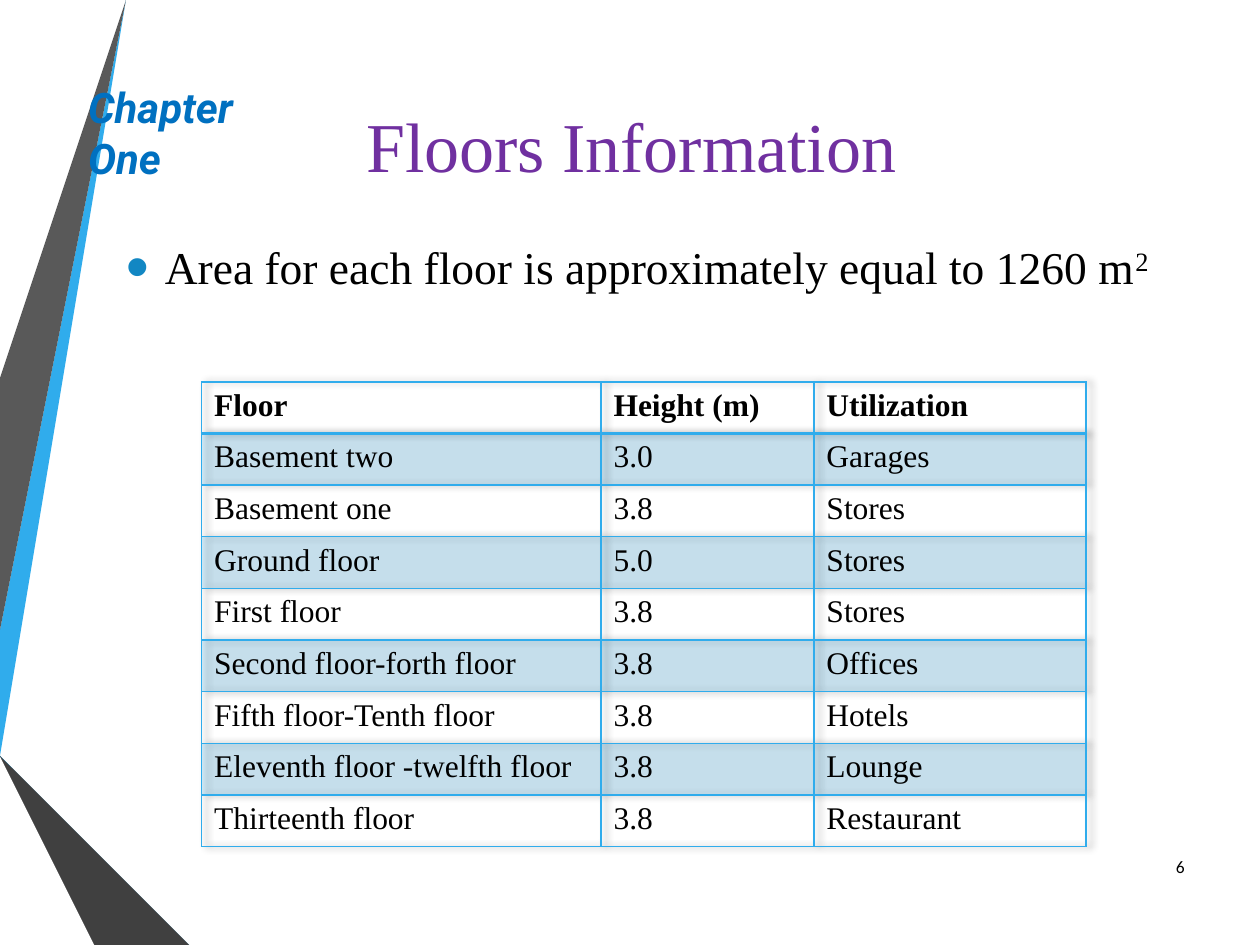
import pptx
import pptx.util
import pptx.oxml
import pptx.oxml.ns
import pptx.dml.color
import pptx.enum.text
from lxml import etree

Inches = pptx.util.Inches
Pt = pptx.util.Pt
RGBColor = pptx.dml.color.RGBColor
Align = pptx.enum.text.PP_ALIGN
Anchor = pptx.enum.text.MSO_ANCHOR
qn = pptx.oxml.ns.qn

SKY = RGBColor(0x30, 0xAC, 0xEC)
BLUE = RGBColor(0x12, 0x87, 0xC3)
DEEP_BLUE = RGBColor(0x0C, 0x5A, 0x82)
GRAY = RGBColor(0x59, 0x59, 0x59)
DARK_GRAY = RGBColor(0x40, 0x40, 0x40)
CHARCOAL = RGBColor(0x26, 0x26, 0x26)
PURPLE = RGBColor(0x70, 0x30, 0xA0)
CHAPTER_BLUE = RGBColor(0x00, 0x70, 0xC0)
BLACK = RGBColor(0, 0, 0)
SERIF = "Times New Roman"

RIBBONS = [
    (SKY, [(0, 5.44), (0, 5.75), (0.22, 5.79), (1.17, 0), (0.89, 0)]),
    (GRAY, [(0.83, 0), (0.55, 0), (0, 3.36), (0, 5.06)]),
    (CHARCOAL, [(0, 6.19), (0, 6.21), (0.93, 7.5), (0.99, 7.5)]),
    (DEEP_BLUE, [(0, 5.79), (0, 5.8), (1.56, 7.5), (1.63, 7.5)]),
    (BLUE, [(0, 5.79), (1.63, 7.5), (2.33, 7.5), (0.22, 5.79), (0, 5.75)]),
    (DARK_GRAY, [(0, 6.19), (0.99, 7.5), (1.51, 7.5), (0, 5.86)]),
]
FLOORS = [
    ("Floor", "Height (m)", "Utilization"),
    ("Basement two", "3.0", "Garages"),
    ("Basement one", "3.8", "Stores"),
    ("Ground floor", "5.0", "Stores"),
    ("First floor", "3.8", "Stores"),
    ("Second floor-forth floor", "3.8", "Offices"),
    ("Fifth floor-Tenth floor", "3.8", "Hotels"),
    ("Eleventh floor -twelfth floor", "3.8", "Lounge"),
    ("Thirteenth floor", "3.8", "Restaurant"),
]
COLUMN_WIDTHS = [3.17, 1.69, 2.16]
ROW_HEIGHT = 0.41


def style_run(run, size, color, font=SERIF, bold=False, italic=False):
    run.font.name = font
    run.font.size = Pt(size)
    run.font.color.rgb = color
    run.font.bold = bold
    run.font.italic = italic


def add_ribbon(slide, color, points):
    builder = slide.shapes.build_freeform(*points[0], scale=Inches(1))
    builder.add_line_segments(points[1:], close=True)
    shape = builder.convert_to_shape()
    shape.shadow.inherit = False
    shape.fill.solid()
    shape.fill.fore_color.rgb = color
    shape.line.fill.background()


def add_text(slide, box, text, size, color, align=Align.LEFT, anchor=Anchor.MIDDLE, **style):
    shape = slide.shapes.add_textbox(*map(Inches, box))
    frame = shape.text_frame
    frame.word_wrap = True
    frame.vertical_anchor = anchor
    frame.text = text
    paragraph = frame.paragraphs[0]
    paragraph.alignment = align
    style_run(paragraph.runs[0], size, color, **style)
    return shape


def add_area_bullet(slide):
    shape = add_text(slide, (0.9, 1.7, 8.42, 4.8),
                     "Area for each floor is approximately equal to 1260 m",
                     26, BLACK, anchor=Anchor.TOP)
    shape.text_frame.margin_top = Inches(0.2)
    paragraph = shape.text_frame.paragraphs[0]
    exponent = paragraph.add_run()
    exponent.text = "2"
    style_run(exponent, 26, BLACK)
    exponent.font._element.set("baseline", "30000")
    properties = paragraph._p.get_or_add_pPr()
    properties.set("marL", str(Inches(0.31)))
    properties.set("indent", str(Inches(-0.31)))
    color = etree.SubElement(properties, qn("a:buClr"))
    etree.SubElement(color, qn("a:srgbClr"), val=str(BLUE))
    etree.SubElement(properties, qn("a:buSzPct"), val="145000")
    etree.SubElement(properties, qn("a:buFont"), typeface="Arial")
    etree.SubElement(properties, qn("a:buChar"), char="•")


def add_border(cell, side, width):
    line = etree.SubElement(cell._tc.get_or_add_tcPr(), qn("a:ln" + side), w=str(Pt(width)))
    fill = etree.SubElement(line, qn("a:solidFill"))
    etree.SubElement(fill, qn("a:srgbClr"), val=str(SKY))


def add_table_shadow(table):
    effects = etree.Element(qn("a:effectLst"))
    shadow = etree.SubElement(effects, qn("a:outerShdw"), blurRad=str(Pt(4)),
                              dist=str(Pt(3)), dir="0", algn="l", rotWithShape="0")
    color = etree.SubElement(shadow, qn("a:srgbClr"), val=str(BLACK))
    etree.SubElement(color, qn("a:alpha"), val="40000")
    table._tbl.tblPr.insert(0, effects)


def format_cell(cell, text, row):
    cell.text = text
    style_run(cell.text_frame.paragraphs[0].runs[0], 18, BLACK, bold=row == 0)
    for side in "LRTB":
        heavy = (side == "B" and row == 0) or (side == "T" and row == 1)
        add_border(cell, side, 2 if heavy else 1)
    if row % 2:
        cell.fill.solid()
        cell.fill.fore_color.rgb = SKY
        color = cell._tc.tcPr.find(qn("a:solidFill")).find(qn("a:srgbClr"))
        etree.SubElement(color, qn("a:alpha"), val="20000")
    else:
        cell.fill.background()


def add_floor_table(slide):
    table = slide.shapes.add_table(
        len(FLOORS), len(COLUMN_WIDTHS), Inches(1.6), Inches(3.03),
        Inches(sum(COLUMN_WIDTHS)), Inches(ROW_HEIGHT * len(FLOORS))).table
    table.horz_banding = False
    add_table_shadow(table)
    for column, width in zip(table.columns, COLUMN_WIDTHS):
        column.width = Inches(width)
    for row, values in enumerate(FLOORS):
        table.rows[row].height = Inches(ROW_HEIGHT)
        for column, text in enumerate(values):
            format_cell(table.cell(row, column), text, row)


def main():
    presentation = pptx.Presentation()
    presentation.slide_width = Inches(10)
    presentation.slide_height = Inches(7.5)
    slide = presentation.slides.add_slide(presentation.slide_layouts[6])
    for color, points in RIBBONS:
        add_ribbon(slide, color, points)
    add_text(slide, (1.29, 0.6, 7.44, 1.1), "Floors Information", 40, PURPLE, Align.CENTER)
    add_area_bullet(slide)
    add_text(slide, (9.03, 6.68, 0.47, 0.4), "6", 10, BLACK, Align.RIGHT, font="Calibri")
    add_floor_table(slide)
    add_text(slide, (0.6, 0.6, 1.51, 0.5), "Chapter One", 24, CHAPTER_BLUE,
             anchor=Anchor.TOP, font="Roboto", bold=True, italic=True)
    presentation.save("out.pptx")


if __name__ == "__main__":
    main()
